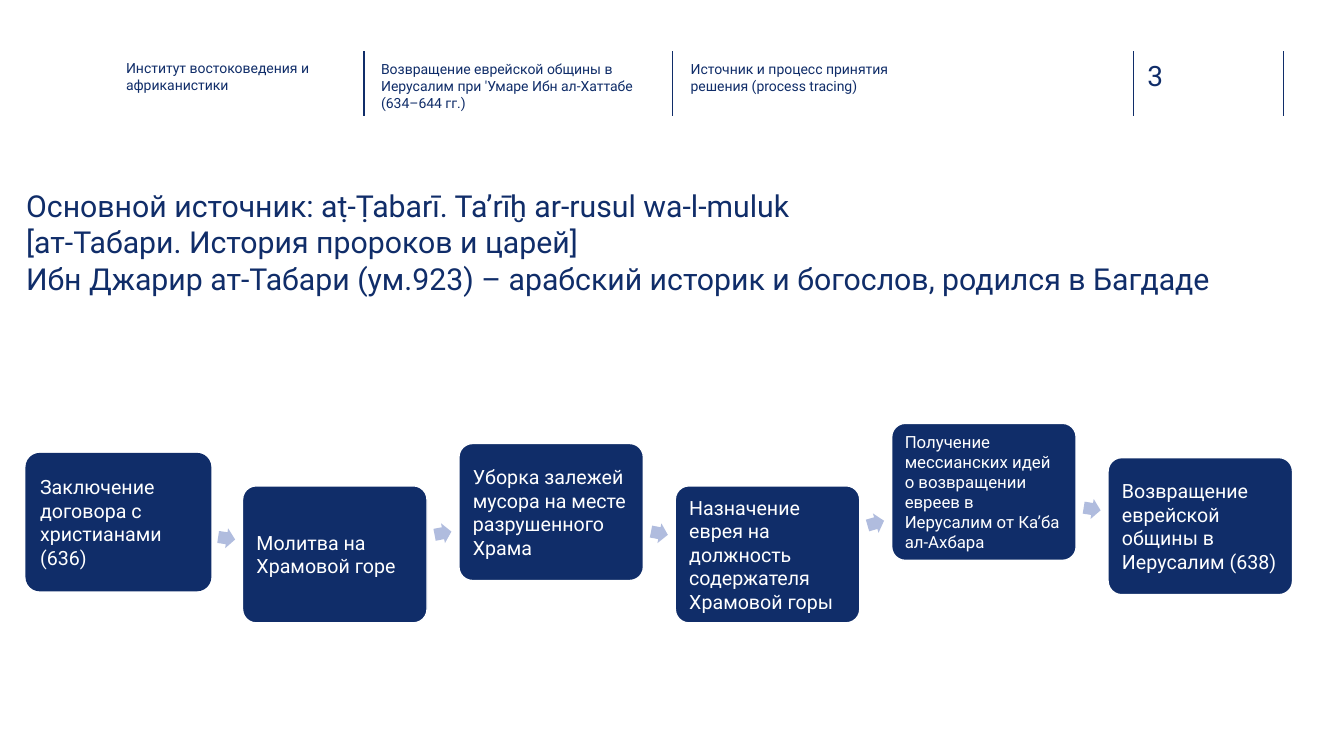
import math
from dataclasses import dataclass

from lxml import etree
from pptx import Presentation
from pptx import util as u
from pptx.dml.color import RGBColor
from pptx.enum import shapes, text
from pptx.oxml.ns import qn


@dataclass(frozen=True)
class Theme:
    font: str = "Roboto"
    navy: str = "102D69"
    pale: str = "B0BCDE"
    white: str = "FFFFFF"
    header_size: float = 10
    number_size: float = 20
    title_size: float = 21.6
    step_size: float = 14
    small_step_size: float = 12
    line_width: float = 1


class SlideBuilder:
    def __init__(self, page, theme):
        self.page = page
        self.theme = theme

    def fill_text(self, frame, lines, size, color, inset=0, anchor=text.MSO_ANCHOR.TOP):
        frame.word_wrap = True
        frame.vertical_anchor = anchor
        frame.margin_left = frame.margin_right = u.Inches(inset)
        frame.margin_top = frame.margin_bottom = u.Inches(inset)
        para = frame.paragraphs[0]
        para.alignment = text.PP_ALIGN.LEFT
        for index, line in enumerate(lines):
            if index:
                para.add_line_break()
            span = para.add_run()
            span.text = line
            span.font.name = self.theme.font
            span.font.size = u.Pt(size)
            span.font.color.rgb = RGBColor.from_string(color)

    def label(self, left, top, width, height, lines, size):
        box = self.page.shapes.add_textbox(*map(u.Inches, (left, top, width, height)))
        self.fill_text(box.text_frame, lines, size, self.theme.navy)

    def divider(self, x, top, bottom):
        line = self.page.shapes.add_connector(
            shapes.MSO_CONNECTOR.STRAIGHT, *map(u.Inches, (x, top, x, bottom)))
        line.line.color.rgb = RGBColor.from_string(self.theme.navy)
        line.line.width = u.Pt(self.theme.line_width)
        etree.SubElement(line._element.spPr, qn("a:effectLst"))

    def shape(self, kind, left, top, width, height, fill, adjustments):
        shape = self.page.shapes.add_shape(kind, *map(u.Inches, (left, top, width, height)))
        shape.shadow.inherit = False
        shape.fill.solid()
        shape.fill.fore_color.rgb = RGBColor.from_string(fill)
        for index, value in enumerate(adjustments):
            shape.adjustments[index] = value
        return shape

    def step(self, left, top, width, height, caption, size, outline):
        box = self.shape(shapes.MSO_SHAPE.ROUNDED_RECTANGLE, left, top, width, height,
                         self.theme.navy, [0.1])
        box.line.color.rgb = RGBColor.from_string(outline)
        box.line.width = u.Pt(self.theme.line_width)
        inset = 0.1 if size == self.theme.step_size else 0.09
        self.fill_text(box.text_frame, [caption], size, self.theme.white, inset,
                       text.MSO_ANCHOR.MIDDLE)

    def arrow(self, center_x, center_y, angle):
        width, height = 0.17, 0.2
        arrow = self.shape(shapes.MSO_SHAPE.RIGHT_ARROW, center_x - width / 2,
                           center_y - height / 2, width, height, self.theme.pale, [0.6, 0.5])
        arrow.line.fill.background()
        arrow.rotation = angle


def main():
    theme = Theme()
    deck = Presentation()
    deck.slide_width, deck.slide_height = u.Inches(13.33), u.Inches(7.5)
    builder = SlideBuilder(deck.slides.add_slide(deck.slide_layouts[6]), theme)

    # Header
    for x in (3.61, 6.67, 11.24, 12.73):
        builder.divider(x, 0.51, 1.15)
    headers = [
        (1.25, 0.59, 2.08, "Институт востоковедения и африканистики"),
        (3.78, 0.6, 2.64, "Возвращение еврейской общины в Иерусалим при 'Умаре Ибн "
                          "ал-Хаттабе (634–644 гг.)"),
        (6.85, 0.6, 2.26, "Источник и процесс принятия решения (process tracing)"),
    ]
    for left, top, width, caption in headers:
        builder.label(left, top, width, 0.45, [caption], theme.header_size)
    builder.label(11.38, 0.58, 0.73, 0.34, ["3"], theme.number_size)

    # Title
    builder.label(0.26, 1.86, 12.06, 1.75, [
        "Основной источник: aṭ-Ṭabarī. Ta’rīḫ ar-rusul wa-l-muluk",
        "[ат-Табари. История пророков и царей]",
        "Ибн Джарир ат-Табари (ум.923) – арабский историк и богослов, родился в Багдаде",
    ], theme.title_size)

    # Process steps: top edge, caption, type size, outline
    steps = [
        (4.5, "Заключение договора с христианами (636)", theme.step_size, theme.navy),
        (4.82, "Молитва на Храмовой горе", theme.step_size, theme.white),
        (4.4, "Уборка залежей мусора на месте разрушенного Храма",
         theme.step_size, theme.white),
        (4.82, "Назначение еврея на должность содержателя Храмовой горы",
         theme.step_size, theme.white),
        (4.2, "Получение мессианских идей о возвращении евреев в Иерусалим "
              "от Ка’ба ал-Ахбара", theme.small_step_size, theme.white),
        (4.54, "Возвращение еврейской общины в Иерусалим (638)",
         theme.step_size, theme.white),
    ]
    first_left, last_left, width, height = 0.26, 10.99, 1.83, 1.36
    pitch = (last_left - first_left) / (len(steps) - 1)
    for index, (top, caption, size, outline) in enumerate(steps):
        left = first_left + index * pitch
        builder.step(left, top, width, height, caption, size, outline)

        # Arrow halfway to the next step, turned towards its centre
        if index + 1 < len(steps):
            rise = steps[index + 1][0] - top
            builder.arrow(left + (width + pitch) / 2, top + (height + rise) / 2,
                          math.degrees(math.atan2(rise, pitch)))

    deck.save("out.pptx")


if __name__ == "__main__":
    main()
